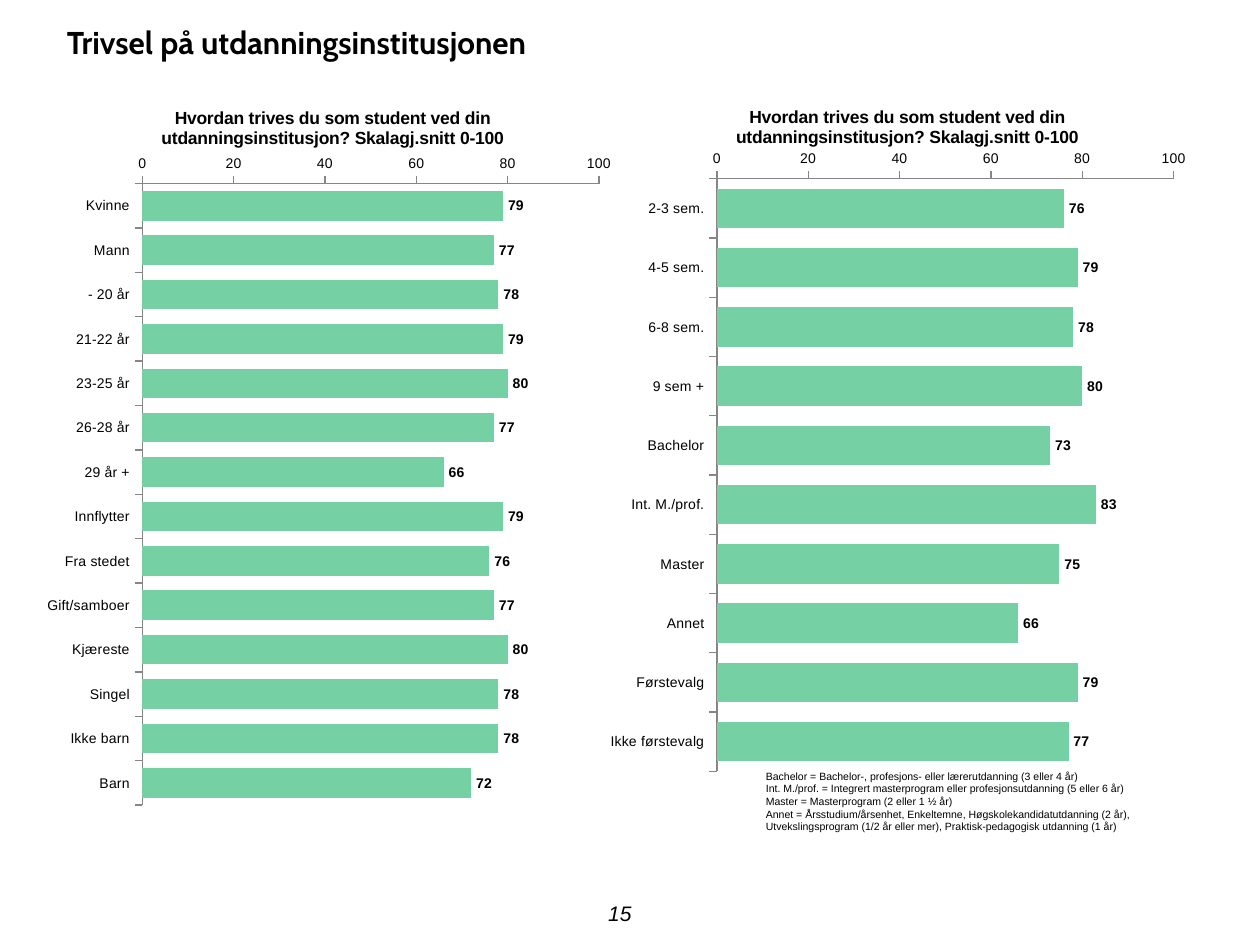
from lxml.etree import fromstring
from pptx import Presentation
from pptx.chart.data import CategoryChartData
from pptx.dml.color import RGBColor
from pptx.enum.chart import XL_CHART_TYPE, XL_LABEL_POSITION, XL_TICK_MARK
from pptx.enum.text import MSO_ANCHOR, PP_ALIGN
from pptx.oxml.ns import qn
from pptx.util import Inches, Pt

# Content
TITLE = "Trivsel på utdanningsinstitusjonen"
PAGE_NUMBER = "15"
QUESTION = "Hvordan trives du som student ved din utdanningsinstitusjon? Skalagj.snitt 0-100"
BACKGROUND = [
    ("Kvinne", 79), ("Mann", 77), ("- 20 år", 78), ("21-22 år", 79),
    ("23-25 år", 80), ("26-28 år", 77), ("29 år +", 66), ("Innflytter", 79),
    ("Fra stedet", 76), ("Gift/samboer", 77), ("Kjæreste", 80),
    ("Singel", 78), ("Ikke barn", 78), ("Barn", 72),
]
STUDIES = [
    ("2-3 sem.", 76), ("4-5 sem.", 79), ("6-8 sem.", 78), ("9 sem +", 80),
    ("Bachelor", 73), ("Int. M./prof.", 83), ("Master", 75), ("Annet", 66),
    ("Førstevalg", 79), ("Ikke førstevalg", 77),
]
NOTES = [
    "Bachelor = Bachelor-, profesjons- eller lærerutdanning (3 eller 4 år)",
    "Int. M./prof. = Integrert masterprogram eller profesjonsutdanning (5 eller 6 år)",
    "Master = Masterprogram (2 eller 1 ½ år)",
    "Annet = Årsstudium/årsenhet, Enkeltemne, Høgskolekandidatutdanning (2 år), "
    "Utvekslingsprogram (1/2 år eller mer), Praktisk-pedagogisk utdanning (1 år)",
]

# Theme and places
THEME = {
    "text": RGBColor.from_string("000000"),
    "bar": RGBColor.from_string("75D1A3"),
    "axis": RGBColor.from_string("868686"),
    "title": {"name": "Cabin", "size": Pt(18), "bold": True},
    "chart_title": {"name": "Arial", "size": Pt(10), "bold": True},
    "axis_text": {"name": "Arial", "size": Pt(8), "bold": False},
    "label": {"name": "Arial", "size": Pt(8), "bold": True},
    "note": {"name": "Arial", "size": Pt(6)},
    "page_number": {"name": "Arial", "size": Pt(12), "italic": True},
}
CHART_TOP, CHART_WIDTH = 0.65, 4.72
CHARTS = [(BACKGROUND, 0.28, 5.98), (STUDIES, 4.84, 5.7)]  # rows, left, height
PLOT = {"x": 0.18, "y": 0.135, "w": 0.768, "h": 0.825}


def set_values(target, values):
    for name, value in values.items():
        setattr(target, name, value)


def style_font(font, role):
    set_values(font, THEME[role])
    font.color.rgb = THEME["text"]


def write(frame, lines, role, align=PP_ALIGN.LEFT):
    for index, line in enumerate(lines):
        para = frame.paragraphs[0] if index == 0 else frame.add_paragraph()
        para.alignment = align
        span = para.add_run()
        span.text = line
        style_font(span.font, role)


def add_text(page, place, lines, role, align, frame_format):
    box = page.shapes.add_textbox(*map(Inches, place))
    set_values(box.text_frame, frame_format)
    write(box.text_frame, lines, role, align)


def fix_plot(chart):
    """Set the inner plot area as fractions of the chart."""
    area = chart._chartSpace.chart.plotArea
    for old in area.findall(qn("c:layout")):
        area.remove(old)
    modes = "".join(f'<c:{key}Mode val="edge"/>' for key in "xy")
    sizes = "".join(f'<c:{key} val="{value}"/>' for key, value in PLOT.items())
    area.insert(0, fromstring(
        '<c:layout xmlns:c="http://schemas.openxmlformats.org/drawingml/2006/chart">'
        f'<c:manualLayout><c:layoutTarget val="inner"/>{modes}{sizes}'
        "</c:manualLayout></c:layout>"))


def add_bar_chart(page, rows, left, height):
    data = CategoryChartData()
    data.categories = [name for name, _ in rows]
    data.add_series("Series 1", [value for _, value in rows])
    place = map(Inches, (left, CHART_TOP, CHART_WIDTH, height))
    chart = page.shapes.add_chart(XL_CHART_TYPE.BAR_CLUSTERED, *place, data).chart
    chart.has_legend = False
    style_font(chart.font, "axis_text")

    # Chart title
    chart.has_title = True
    write(chart.chart_title.text_frame, [QUESTION], "chart_title", PP_ALIGN.CENTER)
    chart.chart_title._element.find(qn("c:overlay")).set("val", "1")

    # Axes
    for axis in (chart.category_axis, chart.value_axis):
        set_values(axis, {
            "has_major_gridlines": False,
            "major_tick_mark": XL_TICK_MARK.OUTSIDE,
            "minor_tick_mark": XL_TICK_MARK.NONE,
        })
        set_values(axis.format.line, {"width": Pt(0.75)})
        axis.format.line.color.rgb = THEME["axis"]
        style_font(axis.tick_labels.font, "axis_text")
    chart.category_axis.reverse_order = True
    set_values(chart.value_axis, {
        "minimum_scale": 0, "maximum_scale": 100, "major_unit": 20})
    set_values(chart.value_axis.tick_labels, {
        "number_format": "0", "number_format_is_linked": False})

    # Bars and value labels
    plot = chart.plots[0]
    set_values(plot, {
        "gap_width": 50, "vary_by_categories": False, "has_data_labels": True})
    fill = plot.series[0].format.fill
    fill.solid()
    fill.fore_color.rgb = THEME["bar"]
    set_values(plot.data_labels, {
        "show_value": True, "position": XL_LABEL_POSITION.OUTSIDE_END,
        "number_format": "0", "number_format_is_linked": False})
    style_font(plot.data_labels.font, "label")
    fix_plot(chart)


def main():
    deck = Presentation()
    set_values(deck, {"slide_width": Inches(10), "slide_height": Inches(7.5)})
    page = deck.slides.add_slide(deck.slide_layouts[5])

    # Title
    title = page.shapes.title
    set_values(title, {"left": Inches(0.43), "top": Inches(0.13),
                       "width": Inches(9.17), "height": Inches(0.4)})
    set_values(title.text_frame, {"word_wrap": True,
                                  "vertical_anchor": MSO_ANCHOR.MIDDLE})
    write(title.text_frame, [TITLE], "title")

    # Charts
    for rows, left, height in CHARTS:
        add_bar_chart(page, rows, left, height)

    # Notes and page number
    add_text(page, (5.98, 6.06, 3.15, 0.61), NOTES, "note", PP_ALIGN.LEFT,
             {"word_wrap": True})
    add_text(page, (4.64, 7.08, 0.56, 0.33), [PAGE_NUMBER], "page_number",
             PP_ALIGN.CENTER,
             {"word_wrap": False, "vertical_anchor": MSO_ANCHOR.MIDDLE})
    deck.save("out.pptx")


if __name__ == "__main__":
    main()
